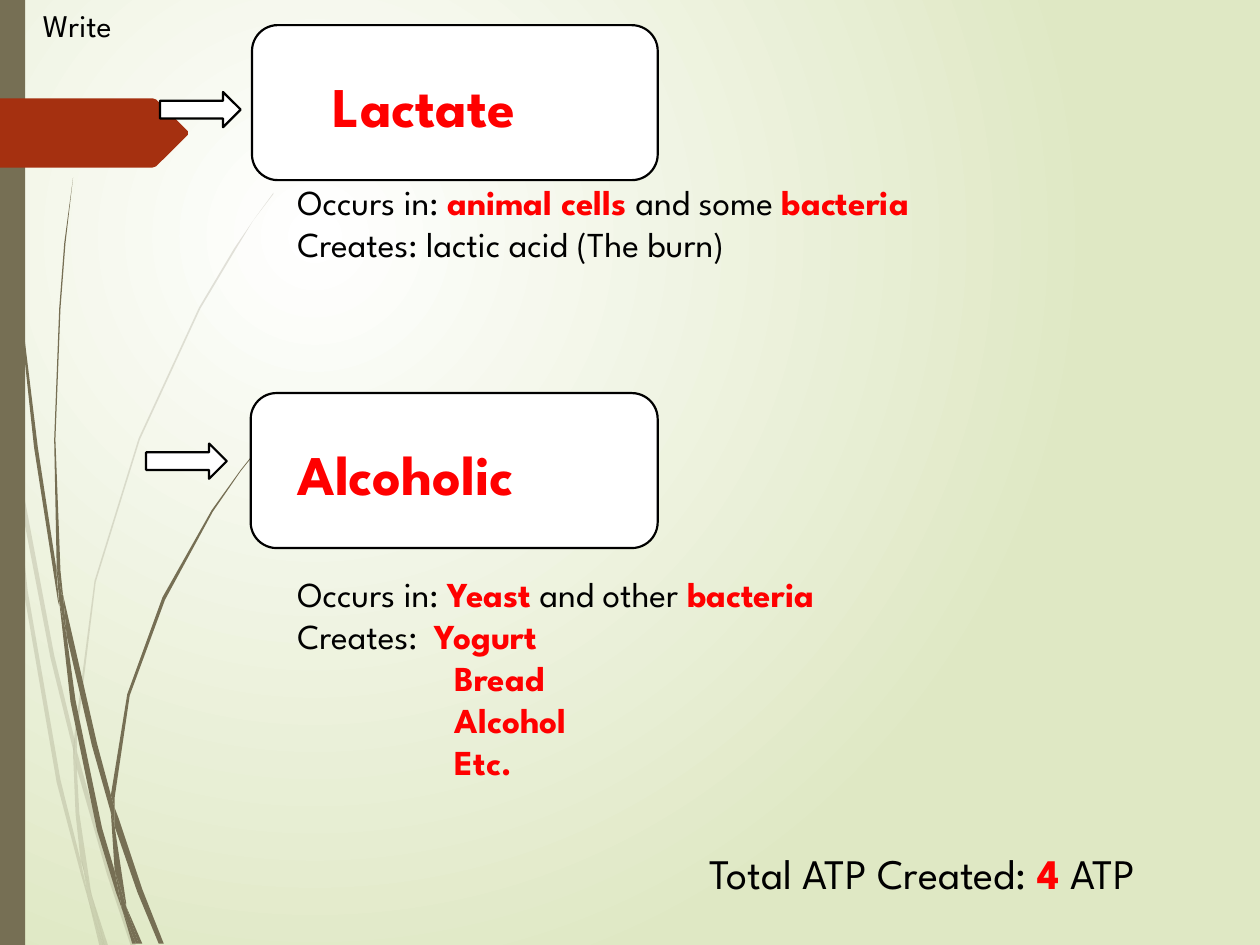
from lxml import etree
from pptx import Presentation
from pptx.dml.color import RGBColor
from pptx.enum.shapes import MSO_SHAPE
from pptx.enum.text import MSO_ANCHOR, MSO_AUTO_SIZE, PP_ALIGN
from pptx.oxml.ns import qn
from pptx.util import Inches, Pt

RECT = MSO_SHAPE.RECTANGLE
ROUNDED = MSO_SHAPE.ROUNDED_RECTANGLE
ARROW = MSO_SHAPE.RIGHT_ARROW
TOP = MSO_ANCHOR.TOP
LEFT = PP_ALIGN.LEFT
NO_FIT = MSO_AUTO_SIZE.NONE

FONT = "League Spartan"
COLORS = {
    "black": "000000", "white": "FFFFFF", "red": "FF0000",
    "olive": "766F54", "rust": "A53010", "pale": "DFE8C4",
}

# Outlines of the pieces that make up the grass blades
FAINT_GRASS = [
    [(0.08, 3.5), (0.06, 3.22), (0, 2.82), (0, 2.99), (0.07, 3.44)],
    [(0.4, 5.22), (0.59, 5.99), (0.59, 5.86), (0.43, 5.2), (0.1, 3.45), (0.12, 3.76)],
    [(0.64, 6.07), (0.61, 5.96), (0.61, 6.1), (0.85, 6.94), (1.04, 7.51),
     (1.08, 7.51), (0.88, 6.92)],
    [(0.83, 7.51), (0.86, 7.51), (0.73, 7.11)],
    [(0.64, 6.83), (0.48, 6.19), (0.22, 4.69), (0.12, 3.76), (0.08, 3.5),
     (0.19, 4.7), (0.45, 6.21), (0.64, 6.93), (0.7, 7.14), (0.69, 7.07)],
    [(0.58, 5.99), (0.6, 6.46), (0.64, 6.83), (0.67, 6.92), (0.73, 7.11),
     (0.72, 7.06), (0.63, 6.46), (0.61, 6.1), (0.61, 6.08)],
    [(0.61, 5.84), (0.76, 4.62), (1.11, 3.49), (1.59, 2.45), (1.87, 1.98),
     (2.01, 1.75), (2.17, 1.54), (2.17, 1.53), (2.01, 1.75), (1.86, 1.97),
     (1.58, 2.44), (1.1, 3.48), (0.75, 4.61), (0.59, 5.84), (0.59, 5.86), (0.61, 5.96)],
    [(0.7, 7.14), (0.79, 7.51), (0.82, 7.51)],
    [(0.61, 6.08), (0.61, 6.1), (0.61, 5.96), (0.59, 5.86), (0.58, 5.99)],
    [(0.67, 6.92), (0.65, 6.83), (0.69, 7.07), (0.7, 7.14), (0.82, 7.51),
     (0.83, 7.51), (0.73, 7.11)],
]
DARK_GRASS = [
    [(0.05, 1.1), (0.14, 2.33), (0.27, 3.55), (0.46, 4.77), (0.47, 4.81),
     (0.45, 4.57), (0.45, 4.53), (0.3, 3.55), (0.15, 2.32), (0.06, 1.09),
     (0.04, 0.48), (0.03, 0), (0.02, 0), (0.03, 0.48)],
    [(0.73, 5.92), (0.88, 6.45), (0.88, 6.33), (0.88, 6.31), (0.77, 5.9),
     (0.5, 4.72), (0.53, 5.05)],
    [(0.94, 6.49), (0.91, 6.41), (0.91, 6.56), (1.09, 7.08), (1.26, 7.49),
     (1.3, 7.49), (1.13, 7.06)],
    [(0.91, 6.91), (0.81, 6.57), (0.6, 5.56), (0.53, 5.05), (0.47, 4.77),
     (0.56, 5.57), (0.77, 6.59), (0.92, 7.08), (0.97, 7.22), (0.96, 7.17)],
    [(0.5, 4.72), (0.48, 4.53), (0.44, 3.49), (0.48, 2.45), (0.52, 1.93),
     (0.58, 1.41), (0.51, 1.93), (0.47, 2.45), (0.43, 3.49), (0.45, 4.49), (0.49, 4.72)],
    [(1.1, 7.49), (1.13, 7.49), (1, 7.19)],
    [(0.47, 4.77), (0.53, 5.05), (0.5, 4.72), (0.49, 4.72), (0.45, 4.49), (0.45, 4.53)],
    [(0.91, 6.33), (1.03, 5.52), (1.31, 4.76), (1.69, 4.06), (1.91, 3.74),
     (2.03, 3.59), (2.16, 3.44), (2.15, 3.44), (2.03, 3.58), (1.91, 3.73),
     (1.68, 4.05), (1.29, 4.74), (1.01, 5.51), (0.88, 6.31), (0.91, 6.41)],
    [(0.97, 7.22), (1.05, 7.49), (1.08, 7.49)],
    [(0.88, 6.45), (0.91, 6.91), (0.96, 7.06), (1, 7.19), (1, 7.16),
     (0.91, 6.56), (0.9, 6.51)],
    [(0.88, 6.45), (0.9, 6.51), (0.91, 6.56), (0.91, 6.41), (0.88, 6.31), (0.88, 6.33)],
    [(0.96, 7.06), (0.91, 6.91), (0.96, 7.17), (0.97, 7.22), (1.08, 7.49),
     (1.1, 7.49), (1, 7.19)],
]
TAG = [(1.49, 1.07), (1.24, 1.32), (1.21, 1.33), (0, 1.33),
       (0, 0.78), (1.21, 0.78), (1.24, 0.79), (1.49, 1.04)]


class SlideBuilder:
    def __init__(self, slide):
        self.slide = slide
        self.shapes = slide.shapes

    def color(self, name):
        return RGBColor.from_string(COLORS[name])

    def background(self, inner, outer):
        fill = self.slide.background.fill
        fill.gradient()
        for stop, name, position in zip(fill.gradient_stops, (inner, outer), (0, 1)):
            stop.color.rgb = self.color(name)
            stop.position = position
        grad = self.slide.element.find(".//" + qn("a:gradFill"))
        grad.remove(grad.find(qn("a:lin")))
        path = etree.SubElement(grad, qn("a:path"), path="circle")
        etree.SubElement(path, qn("a:fillToRect"),
                         l="50000", t="50000", r="100000", b="100000")

    def paint(self, sp, fill, line=None, opacity=100):
        sp.shadow.inherit = False
        sp.fill.solid()
        sp.fill.fore_color.rgb = self.color(fill)
        if opacity < 100:
            tint = sp.element.spPr.find(qn("a:solidFill"))[0]
            etree.SubElement(tint, qn("a:alpha"), val=str(opacity * 1000))
        if line:
            sp.line.color.rgb = self.color(line)
            sp.line.width = Pt(1.25)
        else:
            sp.line.fill.background()

    def shape(self, kind, box, fill, line=None):
        sp = self.shapes.add_shape(kind, *map(Inches, box))
        self.paint(sp, fill, line)

    def outline(self, points, fill, opacity=100):
        first, *rest = [(Inches(x), Inches(y)) for x, y in points]
        builder = self.shapes.build_freeform(*first, scale=1.0)
        builder.add_line_segments(rest)
        self.paint(builder.convert_to_shape(), fill, opacity=opacity)

    def placeholder(self, idx, box, size, paragraphs):
        sp = self.slide.placeholders[idx]
        self.shapes.element.append(sp.element)  # bring in front of the boxes
        self.text(sp, box, size, paragraphs)

    def textbox(self, box, size, paragraphs):
        self.text(self.shapes.add_textbox(*map(Inches, box)), box, size, paragraphs)

    def text(self, sp, box, size, paragraphs):
        """Write paragraphs of (indent, runs); a run marked with * is red and bold."""
        sp.left, sp.top, sp.width, sp.height = map(Inches, box)
        tf = sp.text_frame
        tf.word_wrap = True
        tf.auto_size = NO_FIT
        tf.vertical_anchor = TOP
        for i, (indent, runs) in enumerate(paragraphs):
            p = tf.add_paragraph() if i else tf.paragraphs[0]
            p.alignment = LEFT
            p.space_before = p.space_after = Pt(0)
            p.font.name = FONT
            p.font.size = Pt(size)
            pPr = p._p.get_or_add_pPr()
            pPr.set("marL", str(Inches(indent)))
            pPr.set("indent", "0")
            pPr.find(qn("a:defRPr")).addprevious(etree.Element(qn("a:buNone")))
            for text in runs:
                key = text.startswith("*")
                r = p.add_run()
                r.text = text.lstrip("*")
                r.font.bold = key
                r.font.color.rgb = self.color("red" if key else "black")


def main():
    prs = Presentation()
    prs.slide_width, prs.slide_height = Inches(10), Inches(7.5)
    comparison = prs.slide_layouts[4]
    s = SlideBuilder(prs.slides.add_slide(comparison))

    s.background("white", "pale")
    for pieces, opacity in ((FAINT_GRASS, 20), (DARK_GRASS, 100)):
        for piece in pieces:
            s.outline(piece, "olive", opacity)
    s.shape(RECT, (0, 0, 0.2, 7.5), "olive")
    s.outline(TAG, "rust")

    for box in ((2, 0.2, 3.22, 1.23), (1.99, 3.12, 3.23, 1.23)):
        s.shape(ROUNDED, box, "white", "black")
    s.textbox((5.53, 6.68, 6.05, 0.5), 24,
              [(0, ["Total ATP Created: ", "*4 ", "ATP"])])
    for left, top in ((1.27, 0.73), (1.16, 3.52)):
        s.shape(ARROW, (left, top, 0.64, 0.28), "white", "black")

    s.placeholder(1, (2.54, 0.52, 2.66, 0.64), 32, [(0, ["*Lactate"])])
    s.placeholder(3, (2.26, 3.44, 4.13, 0.64), 32, [(0, ["*Alcoholic"])])
    s.placeholder(2, (2.26, 1.38, 6.55, 0.77), 20, [
        (0, ["Occurs in: ", "*animal cells ", "and some ", "*bacteria"]),
        (0, ["Creates: lactic acid (The burn)"]),
    ])
    products = [(1.25, ["*" + name]) for name in ("Bread", "Alcohol", "Etc.")]
    s.placeholder(4, (2.26, 4.49, 6.55, 1.78), 20, [
        (0, ["Occurs in: ", "*Yeast", " and other ", "*bacteria"]),
        (0, ["Creates:  ", "*Yogurt"]),
        *products,
    ])
    s.placeholder(0, (0.24, 0, 2.14, 0.4), 18, [(0, ["Write"])])
    prs.save("out.pptx")


if __name__ == "__main__":
    main()
